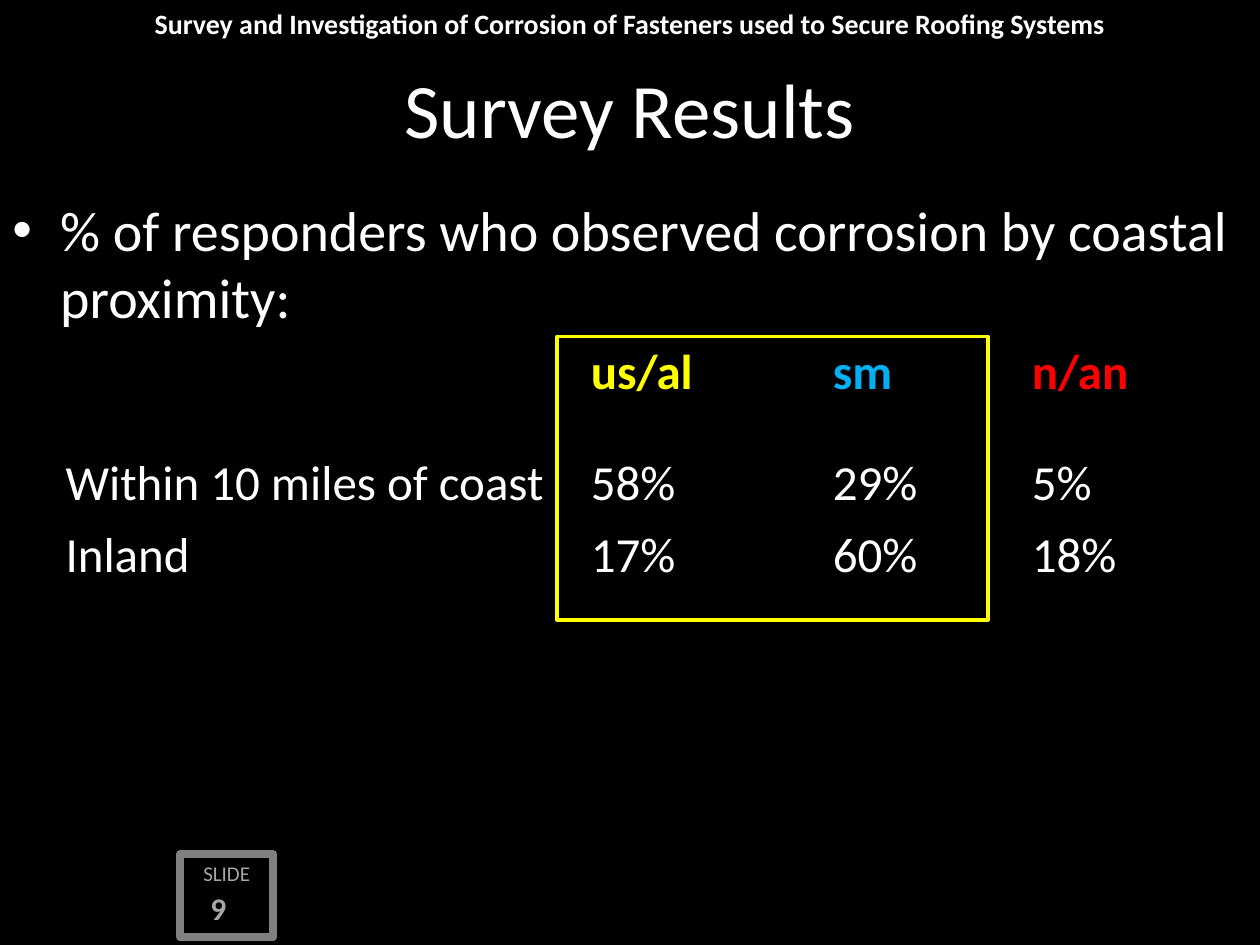
from lxml import etree
from pptx import Presentation
from pptx.dml.color import RGBColor
from pptx.enum.shapes import MSO_SHAPE
from pptx.enum.text import MSO_ANCHOR, PP_ALIGN
from pptx.oxml.ns import qn
from pptx.util import Inches, Pt

RECT = MSO_SHAPE.RECTANGLE
TOP, MIDDLE = MSO_ANCHOR.TOP, MSO_ANCHOR.MIDDLE
LEFT, CENTER = PP_ALIGN.LEFT, PP_ALIGN.CENTER
FONT = "Calibri"
BLACK = RGBColor(0, 0, 0)
WHITE = RGBColor(255, 255, 255)
GRAY = RGBColor(0x80, 0x80, 0x80)
SILVER = RGBColor(0xA6, 0xA6, 0xA6)
YELLOW = RGBColor(255, 255, 0)
BLUE = RGBColor(0, 0xB0, 0xF0)
RED = RGBColor(255, 0, 0)

BANNER = "Survey and Investigation of Corrosion of Fasteners used to Secure Roofing Systems"
TITLE = "Survey Results"
POINT = "% of responders who observed corrosion by coastal proximity:"
ROWS = [
    ["", "us/al", "sm", "n/an"],
    ["Within 10 miles of coast", "58%", "29%", "5%"],
    ["Inland", "17%", "60%", "18%"],
]
HEADS = [WHITE, YELLOW, BLUE, RED]
WIDTHS = [4.17, 1.92, 1.58, 1.5]
HEIGHTS = [0.88, 0.57, 0.57]


def add_run(para, text, size, color, bold=False):
    run = para.add_run()
    run.text = text
    font = run.font
    font.name, font.size, font.bold = FONT, Pt(size), bold
    font.color.rgb = color


def add_text(slide, spot, runs, align=CENTER, anchor=TOP):
    frame = slide.shapes.add_textbox(*map(Inches, spot)).text_frame
    frame.word_wrap = True
    frame.vertical_anchor = anchor
    para = frame.paragraphs[0]
    para.alignment = align
    for run in runs:
        add_run(para, *run)
    return para


def add_box(slide, spot, line, width):
    box = slide.shapes.add_shape(RECT, *map(Inches, spot))
    box.shadow.inherit = False
    box.line.color.rgb = line
    box.line.width = Pt(width)
    return box


def add_bullet(para, indent):
    props = para._p.get_or_add_pPr()
    props.set("marL", str(Inches(indent)))
    props.set("indent", str(-Inches(indent)))
    etree.SubElement(props, qn("a:buFont"), typeface="Arial")
    etree.SubElement(props, qn("a:buChar"), char="•")


def clear_edges(cell):
    props = cell._tc.get_or_add_tcPr()
    for side in ("lnL", "lnR", "lnT", "lnB"):
        edge = etree.SubElement(props, qn("a:" + side), w="0")
        etree.SubElement(edge, qn("a:noFill"))


def add_grid(slide, left, top):
    spot = (left, top, sum(WIDTHS), sum(HEIGHTS))
    table = slide.shapes.add_table(len(ROWS), len(WIDTHS), *map(Inches, spot)).table
    for col, width in zip(table.columns, WIDTHS):
        col.width = Inches(width)
    for row, height in zip(table.rows, HEIGHTS):
        row.height = Inches(height)
    for r, texts in enumerate(ROWS):
        for c, text in enumerate(texts):
            cell = table.cell(r, c)
            clear_edges(cell)
            cell.fill.solid()
            cell.fill.fore_color.rgb = BLACK
            if text:
                color = WHITE if r else HEADS[c]
                add_run(cell.text_frame.paragraphs[0], text, 28, color, r == 0)


def main():
    deck = Presentation()
    deck.slide_width, deck.slide_height = Inches(10), Inches(7.5)
    slide = deck.slides.add_slide(deck.slide_layouts[6])
    back = slide.background.fill
    back.solid()
    back.fore_color.rgb = BLACK

    badge = add_box(slide, (1.43, 6.78, 0.74, 0.66), GRAY, 4.5)
    badge.fill.solid()
    badge.fill.fore_color.rgb = BLACK
    badge.text_frame.vertical_anchor = TOP
    label = badge.text_frame.paragraphs[0]
    label.alignment = CENTER
    add_run(label, "SLIDE", 12, SILVER)
    add_text(slide, (1.42, 6.98, 0.69, 0.43),
             [("9", 18, SILVER, True), (" ", 20, SILVER, True)])

    add_text(slide, (0, 0, 10, 0.3), [(BANNER, 16, WHITE, True)])
    add_text(slide, (0, 0.33, 10, 1.05), [(TITLE, 44, WHITE)], anchor=MIDDLE)
    point = add_text(slide, (0, 1.5, 10, 5.08), [(POINT, 32, WHITE)], LEFT)
    add_bullet(point, 0.38)

    add_grid(slide, 0.42, 2.67)
    frame = add_box(slide, (4.42, 2.67, 3.42, 2.25), YELLOW, 2)
    frame.fill.background()
    deck.save("out.pptx")


if __name__ == "__main__":
    main()
